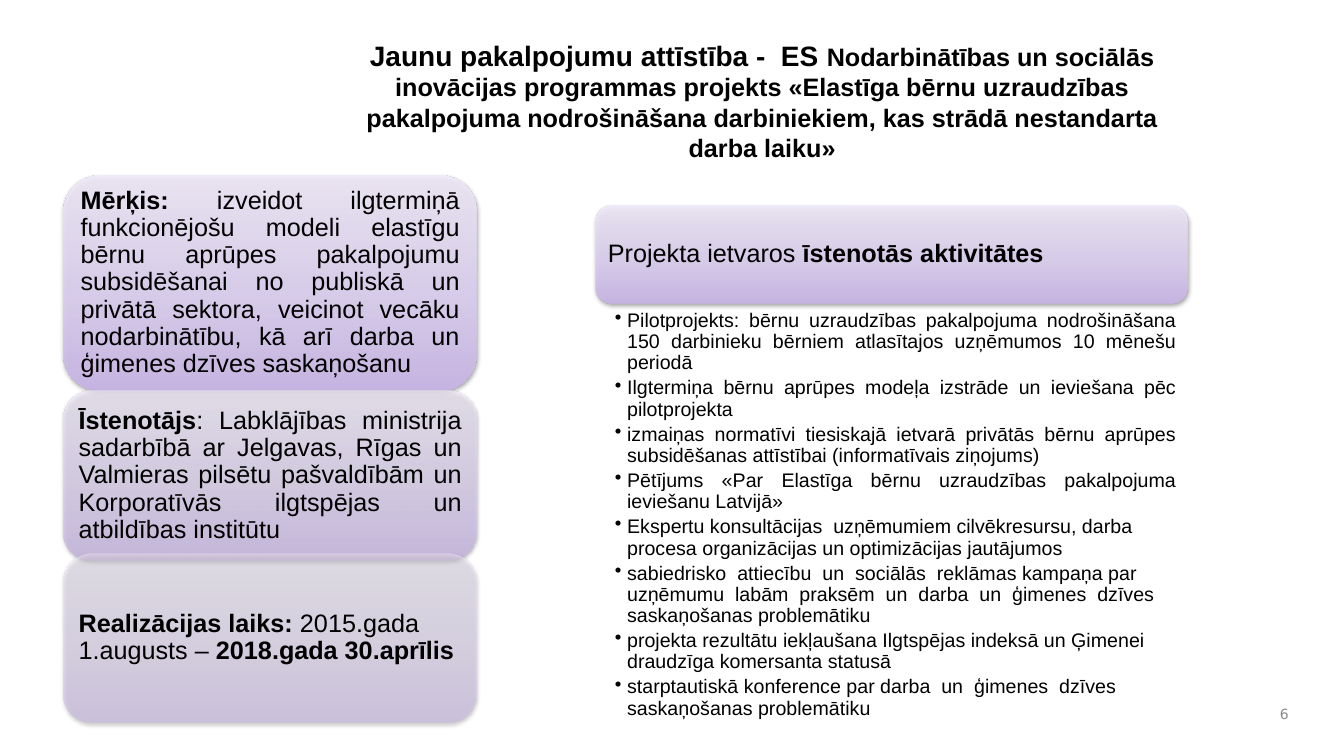
from lxml import etree
from pptx import Presentation
from pptx.dml.color import RGBColor
from pptx.enum.shapes import MSO_SHAPE
from pptx.enum.text import MSO_ANCHOR, PP_ALIGN
from pptx.oxml import parse_xml
from pptx.oxml.ns import nsdecls, qn
from pptx.util import Inches, Pt

ROUNDED = MSO_SHAPE.ROUNDED_RECTANGLE
TOP, MIDDLE = MSO_ANCHOR.TOP, MSO_ANCHOR.MIDDLE
LEFT, CENTER, RIGHT, JUSTIFY = (
    PP_ALIGN.LEFT, PP_ALIGN.CENTER, PP_ALIGN.RIGHT, PP_ALIGN.JUSTIFY)

COLORS = {
    "text": "000000",
    "number": "898989",
    "shadow": "000000",
    "card_bottom": "C9B5E8",
    "card_middle": "D8CBEE",
    "card_top": "F0EAF9",
}
GRADIENT = [(0, "card_bottom"), (35, "card_middle"), (100, "card_top")]
CARD_INSETS = (0.07, 0.07, 0.07, 0.07)
PLAIN_INSETS = (0.1, 0.05, 0.1, 0.05)
CORNER_PADDING = 0.049  # text margin inside a card, as a share of its height


class SlideBuilder:
    def __init__(self, slide, font="Arial"):
        self.slide = slide
        self.font = font

    def text(self, left, top, width, height, paragraphs, size=None, font=None,
             color="text", align=LEFT, anchor=TOP, insets=PLAIN_INSETS,
             line_spacing=None, space_after=0, bullet=None):
        """Each paragraph is (alignment or None, [(text, bold, size), ...])."""
        box = self.slide.shapes.add_textbox(
            Inches(left), Inches(top), Inches(width), Inches(height))
        frame = box.text_frame
        frame.word_wrap = True
        frame.vertical_anchor = anchor
        (frame.margin_left, frame.margin_top,
         frame.margin_right, frame.margin_bottom) = map(Inches, insets)
        for index, (own_align, spans) in enumerate(paragraphs):
            para = frame.paragraphs[0] if index == 0 else frame.add_paragraph()
            para.alignment = own_align or align
            para.space_after = Pt(space_after)
            if line_spacing:
                para.line_spacing = line_spacing
            if bullet:
                self.add_bullet(para, bullet)
            para.font.name = font or self.font
            para.font.color.rgb = RGBColor.from_string(COLORS[color])
            if size:
                para.font.size = Pt(size)
            for words, bold, span_size in spans:
                span = para.add_run()
                span.text = words
                span.font.bold = bold
                if span_size:
                    span.font.size = Pt(span_size)

    def add_bullet(self, para, character, indent=0.12):
        properties = para._p.get_or_add_pPr()
        properties.set("marL", str(Inches(indent)))
        properties.set("indent", str(-Inches(indent)))
        etree.SubElement(properties, qn("a:buChar")).set("char", character)

    def card(self, left, top, width, height, opacity, spans, align=LEFT):
        shape = self.slide.shapes.add_shape(
            ROUNDED, Inches(left), Inches(top), Inches(width), Inches(height))
        shape.line.fill.background()
        stops = "".join(
            f'<a:gs pos="{position * 1000}"><a:srgbClr val="{COLORS[name]}">'
            f'<a:alpha val="{opacity * 1000}"/></a:srgbClr></a:gs>'
            for position, name in GRADIENT)
        properties = shape._element.spPr
        properties.find(qn("a:prstGeom")).addnext(parse_xml(
            f'<a:gradFill {nsdecls("a")} rotWithShape="1"><a:gsLst>{stops}'
            '</a:gsLst><a:lin ang="16200000" scaled="0"/></a:gradFill>'))
        properties.append(parse_xml(
            f'<a:effectLst {nsdecls("a")}><a:outerShdw blurRad="{Pt(3.1)}" '
            f'dist="{Pt(1.6)}" dir="5400000" rotWithShape="0">'
            f'<a:srgbClr val="{COLORS["shadow"]}"><a:alpha val="38000"/>'
            '</a:srgbClr></a:outerShdw></a:effectLst>'))
        padding = round(height * CORNER_PADDING, 2)
        self.text(left + padding, top + padding,
                  width - 2 * padding, height - 2 * padding,
                  [(align, spans)], size=18, anchor=MIDDLE,
                  insets=CARD_INSETS, line_spacing=0.9)


TITLE = [
    ("Jaunu pakalpojumu attīstība -  ES ", True, 20),
    ("Nodarbinātības un sociālās inovācijas programmas projekts «Elastīga "
     "bērnu uzraudzības pakalpojuma nodrošināšana darbiniekiem, kas strādā "
     "nestandarta darba laiku»", True, 18),
]

# Top, height, opacity, alignment and text of each card on the left
FACT_CARDS = [
    (1.74, 2.13, 90, JUSTIFY, [
        ("Mērķis: ", True, None),
        ("izveidot ilgtermiņā funkcionējošu modeli elastīgu bērnu aprūpes "
         "pakalpojumu subsidēšanai no publiskā un privātā sektora, veicinot "
         "vecāku nodarbinātību, kā arī darba un ģimenes dzīves saskaņošanu",
         False, None)]),
    (3.88, 1.68, 70, JUSTIFY, [
        ("Īstenotājs", True, None),
        (": Labklājības ministrija sadarbībā ar Jelgavas, Rīgas un Valmieras "
         "pilsētu pašvaldībām un Korporatīvās ilgtspējas un atbildības "
         "institūtu", False, None)]),
    (5.49, 1.68, 50, LEFT, [
        ("Realizācijas laiks:", True, None),
        (" 2015.gada 1.augusts – ", False, None),
        ("2018.gada 30.aprīlis", True, None)]),
]

ACTIVITIES = [
    (JUSTIFY, "Pilotprojekts: bērnu uzraudzības pakalpojuma nodrošināšana 150 "
              "darbinieku bērniem atlasītajos uzņēmumos 10 mēnešu periodā"),
    (JUSTIFY, "Ilgtermiņa bērnu aprūpes modeļa izstrāde un ieviešana pēc "
              "pilotprojekta"),
    (JUSTIFY, "izmaiņas normatīvi tiesiskajā ietvarā privātās bērnu aprūpes "
              "subsidēšanas attīstībai (informatīvais ziņojums)"),
    (JUSTIFY, "Pētījums «Par Elastīga bērnu uzraudzības pakalpojuma ieviešanu "
              "Latvijā»"),
    (LEFT, "Ekspertu konsultācijas  uzņēmumiem cilvēkresursu, darba procesa "
           "organizācijas un optimizācijas jautājumos"),
    (LEFT, "sabiedrisko  attiecību  un  sociālās  reklāmas kampaņa par "
           "uzņēmumu  labām  praksēm  un  darba  un  ģimenes  dzīves "
           "saskaņošanas problemātiku"),
    (LEFT, "projekta rezultātu iekļaušana Ilgtspējas indeksā un Ģimenei "
           "draudzīga komersanta statusā"),
    (LEFT, "starptautiskā konference par darba  un  ģimenes  dzīves "
           "saskaņošanas problemātiku"),
]


def main():
    deck = Presentation()
    deck.slide_width, deck.slide_height = Inches(13.33), Inches(7.5)
    page = SlideBuilder(deck.slides.add_slide(deck.slide_layouts[6]))

    # Title
    page.text(3.46, 0.33, 8.2, 1.17, [(CENTER, TITLE)])

    # Project facts
    for top, height, opacity, align, spans in FACT_CARDS:
        page.card(0.63, top, 4.1, height, opacity, spans, align)

    # Activities
    page.card(5.91, 2.04, 5.87, 0.97, 90, [
        ("Projekta ietvaros ", False, None),
        ("īstenotās aktivitātes", True, None)])
    page.text(5.91, 3.06, 5.87, 4.05,
              [(align, [(words, None, None)]) for align, words in ACTIVITIES],
              size=14, insets=(0.19, 0.02, 0.11, 0.02),
              line_spacing=0.9, space_after=2.8, bullet="•")

    # Slide number
    page.text(12.44, 6.92, 0.44, 0.33, [(RIGHT, [("6", None, None)])],
              size=10, font="DejaVu Sans", color="number", anchor=MIDDLE)

    deck.save("out.pptx")


if __name__ == "__main__":
    main()
